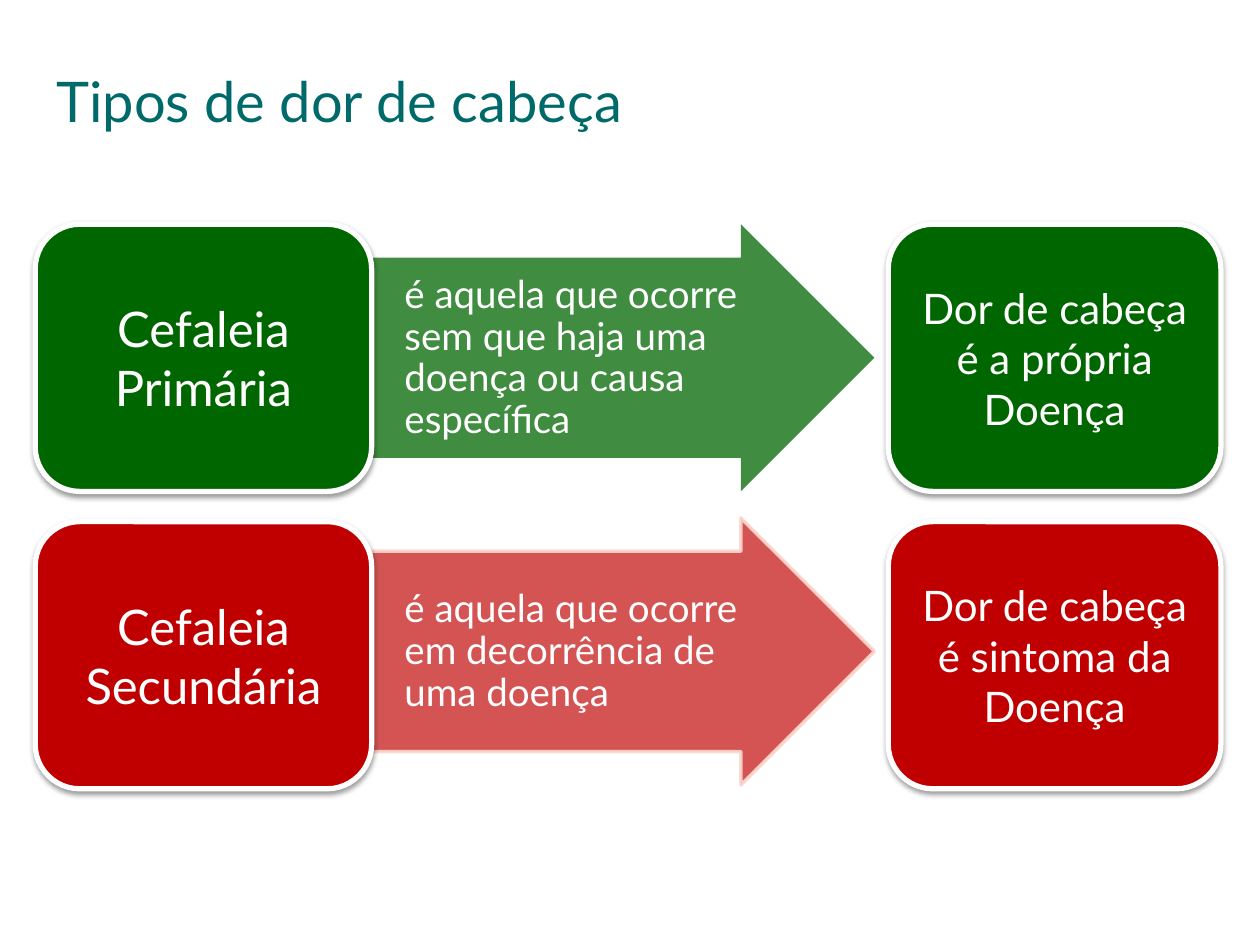
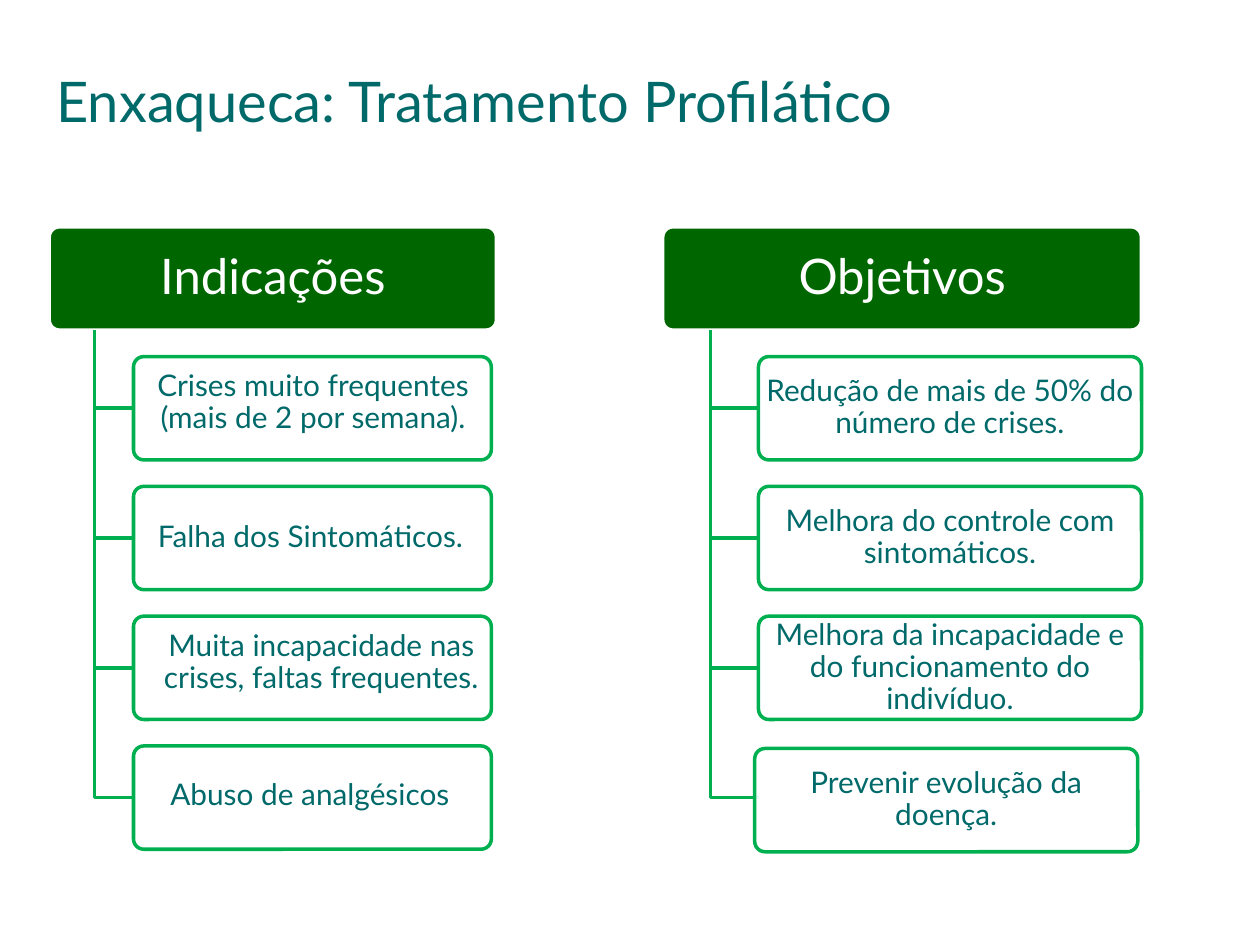
from dataclasses import dataclass
from typing import Optional

import lxml.etree
import pptx
import pptx.dml.color
import pptx.enum.shapes
import pptx.enum.text
import pptx.oxml.ns
import pptx.util

Inches = pptx.util.Inches
Pt = pptx.util.Pt
qn = pptx.oxml.ns.qn
SHAPES = pptx.enum.shapes.MSO_SHAPE
ALIGN = pptx.enum.text.PP_ALIGN
ANCHOR = pptx.enum.text.MSO_ANCHOR

FONT = "Lato"
TEAL = "006969"
DARK_GREEN = "006600"
GREEN = "00B050"
RED = "C00000"
PALE_RED = "FBD7CD"
WHITE = "FFFFFF"
BLACK = "000000"

DEFAULT_INSETS = (0.1, 0.05, 0.1, 0.05)
CARD_HEIGHT = 2.12
BRANCH_TOP = 2.83
BRANCH_HEIGHT = 0.82
BRANCH_PITCH = 1.03
HEADER_TOP = 1.8


@dataclass
class Frame:
    left: float
    top: float
    width: float
    height: float

    def lengths(self) -> tuple:
        return tuple(Inches(value) for value in (self.left, self.top, self.width, self.height))


@dataclass
class Headache:
    name: str
    definition: str
    meaning: tuple
    color: str
    card_top: float
    arrow_top: float
    arrow_opacity: int
    arrow_outline: Optional[str] = None


@dataclass
class Branch:
    text: str
    label: Optional[Frame] = None
    shift: tuple = (0, 0)
    wrap: bool = True


@dataclass
class Tree:
    title: str
    header_left: float
    header_width: float
    trunk: float
    branch_left: float
    branch_width: float
    branches: list


HEADACHES = [
    Headache("Cefaleia Primária",
             "é aquela que ocorre sem que haja uma doença ou causa específica",
             ("Dor de cabeça é a própria", "Doença"), DARK_GREEN, 1.78, 1.78, 75),
    Headache("Cefaleia Secundária",
             "é aquela que ocorre em decorrência de uma doença",
             ("Dor de cabeça é sintoma da", "Doença"), RED, 4.14, 4.11, 67, PALE_RED),
]

TREES = [
    Tree("Indicações", 0.39, 3.55, 0.75, 1.06, 2.84, [
        Branch("Crises muito frequentes (mais de 2 por semana).", Frame(1.04, 2.89, 2.89, 0.62)),
        Branch("Falha dos Sintomáticos.", Frame(1.1, 4.09, 2.73, 0.36)),
        Branch("Muita incapacidade nas crises, faltas frequentes.", Frame(1.04, 4.96, 3.02, 0.62)),
        Branch("Abuso de analgésicos", Frame(1.24, 6.14, 2.44, 0.36), wrap=False),
    ]),
    Tree("Objetivos", 5.26, 3.8, 5.64, 6.02, 3.04, [
        Branch("Redução de mais de 50% do número de crises."),
        Branch("Melhora do controle com sintomáticos."),
        Branch("Melhora da incapacidade e do funcionamento do indivíduo."),
        Branch("Prevenir evolução da doença.", shift=(-0.03, 0.02)),
    ]),
]


def rgb(color: str):
    return pptx.dml.color.RGBColor.from_string(color)


def set_opacity(parent, percent: int) -> None:
    color = parent.find(qn("a:solidFill")).find(qn("a:srgbClr"))
    lxml.etree.SubElement(color, qn("a:alpha"), val=str(percent * 1000))


def set_outline(shape, color: Optional[str], width: float = 2) -> None:
    if color is None:
        shape.line.fill.background()
        return
    shape.line.color.rgb = rgb(color)
    shape.line.width = Pt(width)


def add_shadow(shape) -> None:
    effects = shape._element.spPr.find(qn("a:effectLst"))
    shadow = lxml.etree.SubElement(
        effects, qn("a:outerShdw"), blurRad=str(Pt(3.1)), dist=str(Pt(1.6)),
        dir="5400000", rotWithShape="0")
    color = lxml.etree.SubElement(shadow, qn("a:srgbClr"), val=BLACK)
    lxml.etree.SubElement(color, qn("a:alpha"), val="38000")


def add_box(slide, kind, frame: Frame, fill: str, outline: Optional[str] = None,
            width: float = 2, opacity: int = 100, corner: Optional[float] = None):
    shape = slide.shapes.add_shape(kind, *frame.lengths())
    shape.shadow.inherit = False
    shape.fill.solid()
    shape.fill.fore_color.rgb = rgb(fill)
    if opacity < 100:
        set_opacity(shape._element.spPr, opacity)
    set_outline(shape, outline, width)
    if corner is not None:
        shape.adjustments[0] = corner
    return shape


def write(shape, *lines: str, size: float, color: str = WHITE, align=ALIGN.CENTER,
          anchor=ANCHOR.MIDDLE, spacing: Optional[float] = None,
          insets: tuple = DEFAULT_INSETS, wrap: bool = True) -> None:
    frame = shape.text_frame
    frame.word_wrap = wrap
    frame.vertical_anchor = anchor
    frame.margin_left, frame.margin_top, frame.margin_right, frame.margin_bottom = map(Inches, insets)
    frame.text = "\n".join(lines)
    for paragraph in frame.paragraphs:
        paragraph.alignment = align
        paragraph.line_spacing = spacing
        paragraph.font.name = FONT
        paragraph.font.size = Pt(size)
        paragraph.font.color.rgb = rgb(color)


def add_text(slide, frame: Frame, *lines: str, **text_format) -> None:
    write(slide.shapes.add_textbox(*frame.lengths()), *lines, **text_format)


def add_titled_slide(presentation, title: str):
    slide = presentation.slides.add_slide(presentation.slide_layouts[6])
    add_text(slide, Frame(0.35, 0.44, 8.27, 0.71), title, size=32, color=TEAL, align=ALIGN.LEFT)
    return slide


def add_card(slide, left: float, top: float, width: float, color: str,
             lines: tuple, size: float) -> None:
    card = add_box(slide, SHAPES.ROUNDED_RECTANGLE, Frame(left, top, width, CARD_HEIGHT),
                   color, WHITE, 3)
    add_shadow(card)
    write(card, *lines, size=size)


def draw_headache(slide, headache: Headache) -> None:
    add_card(slide, 7.05, headache.card_top, 2.64, headache.color, headache.meaning, 24)
    arrow = add_box(slide, SHAPES.RIGHT_ARROW, Frame(2.94, headache.arrow_top, 4, CARD_HEIGHT),
                    headache.color, headache.arrow_outline, opacity=headache.arrow_opacity)
    arrow.adjustments[0] = 0.75
    if headache.arrow_outline:
        set_opacity(arrow._element.spPr.find(qn("a:ln")), 90)
    add_text(slide, Frame(2.94, headache.arrow_top + 0.27, 3.21, 1.59), headache.definition,
             size=22, align=ALIGN.LEFT, spacing=0.9, insets=(0.27, 0.02, 0.02, 0.02))
    add_card(slide, 0.28, headache.card_top, 2.67, headache.color, (headache.name,), 28)


def draw_elbow(slide, trunk: float, top: float, right: float, bottom: float) -> None:
    builder = slide.shapes.build_freeform(Inches(trunk), Inches(top))
    builder.add_line_segments(
        [(Inches(trunk), Inches(bottom)), (Inches(right), Inches(bottom))], close=False)
    elbow = builder.convert_to_shape()
    elbow.shadow.inherit = False
    elbow.fill.background()
    set_outline(elbow, GREEN)


def draw_tree(slide, tree: Tree) -> None:
    header = add_box(slide, SHAPES.ROUNDED_RECTANGLE,
                     Frame(tree.header_left, HEADER_TOP, tree.header_width, BRANCH_HEIGHT),
                     DARK_GREEN, WHITE, corner=0.1)
    write(header, tree.title, size=28, spacing=0.9, insets=(0.06, 0.04, 0.06, 0.04))
    for index, branch in enumerate(tree.branches):
        top = BRANCH_TOP + index * BRANCH_PITCH
        draw_elbow(slide, tree.trunk, HEADER_TOP + BRANCH_HEIGHT, tree.branch_left,
                   top + BRANCH_HEIGHT / 2)
        shift_x, shift_y = branch.shift
        box = add_box(slide, SHAPES.ROUNDED_RECTANGLE,
                      Frame(tree.branch_left + shift_x, top + shift_y,
                            tree.branch_width, BRANCH_HEIGHT),
                      WHITE, GREEN, opacity=90, corner=0.1)
        if branch.label:
            add_text(slide, branch.label, branch.text, size=17, color=TEAL,
                     anchor=ANCHOR.TOP, spacing=0.9, wrap=branch.wrap)
        else:
            write(box, branch.text, size=17, color=TEAL, spacing=0.9,
                  insets=(0.03, 0.02, 0.03, 0.02))


def main() -> None:
    presentation = pptx.Presentation()
    presentation.slide_width = Inches(10)
    presentation.slide_height = Inches(7.5)

    types_slide = add_titled_slide(presentation, "Tipos de dor de cabeça")
    for headache in HEADACHES:
        draw_headache(types_slide, headache)

    treatment_slide = add_titled_slide(presentation, "Enxaqueca: Tratamento Profilático")
    for tree in TREES:
        draw_tree(treatment_slide, tree)

    presentation.save("out.pptx")


if __name__ == "__main__":
    main()
